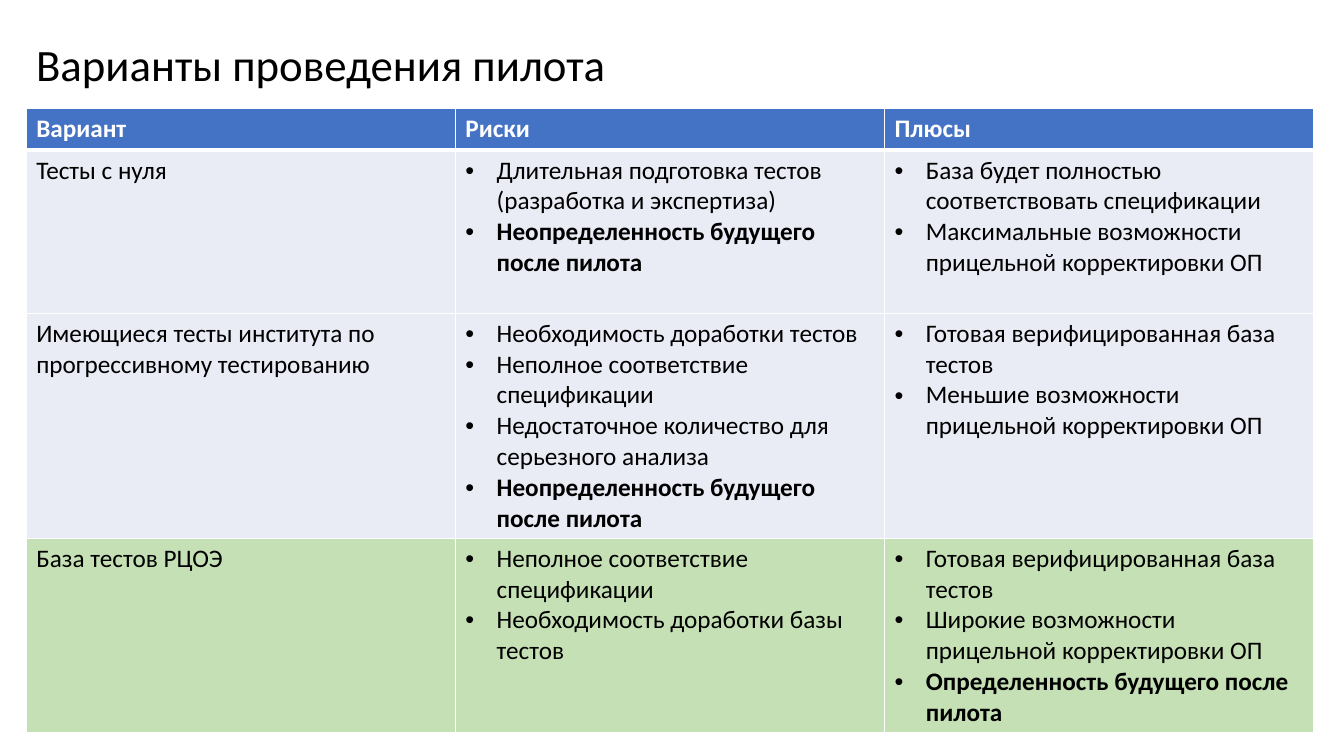
from pptx import Presentation
from pptx.dml.color import RGBColor
from pptx.enum.text import MSO_ANCHOR
from pptx.oxml import parse_xml
from pptx.oxml.ns import nsdecls
from pptx.util import Inches, Pt

# Content: a string is plain text, a list is bulleted, "*" marks a bold item
TITLE = "Варианты проведения пилота"
HEADER = ["Вариант", "Риски", "Плюсы"]
OPTIONS = [
    ("Тесты с нуля",
     ["Длительная подготовка тестов (разработка и экспертиза)",
      "*Неопределенность будущего после пилота"],
     ["База будет полностью соответствовать спецификации",
      "Максимальные возможности прицельной корректировки ОП"]),
    ("Имеющиеся тесты института по прогрессивному тестированию",
     ["Необходимость доработки тестов",
      "Неполное соответствие спецификации",
      "Недостаточное количество для серьезного анализа",
      "*Неопределенность будущего после пилота"],
     ["Готовая верифицированная база тестов",
      "Меньшие возможности прицельной корректировки ОП"]),
    ("База тестов РЦОЭ",
     ["Неполное соответствие спецификации",
      "Необходимость доработки базы тестов"],
     ["Готовая верифицированная база тестов",
      "Широкие возможности прицельной корректировки ОП",
      "*Определенность будущего после пилота"]),
]
ROW_HEIGHTS = [0.41, 1.62, 2.23, 1.93]
LEFT, TABLE_TOP, TABLE_WIDTH = 0.26, 1.08, 12.77
INDENT = Inches(0.31)

THEME = {
    "font": "Calibri", "title": 32, "body": 18,
    "text": "000000", "header_text": "FFFFFF", "border": "FFFFFF",
    "header": "4472C4", "row": "E9EBF5", "chosen": "C5E0B4",
}


def style(p, size, color, bold=False):
    for r in p.runs:
        r.font.name = THEME["font"]
        r.font.size = Pt(size)
        r.font.bold = bold
        r.font.color.rgb = RGBColor.from_string(color)


def add_bullet(p):
    pPr = p._p.get_or_add_pPr()
    pPr.set("marL", str(INDENT))
    pPr.set("indent", str(-INDENT))
    pPr.append(parse_xml(f'<a:buFont {nsdecls("a")} typeface="Arial"/>'))
    pPr.append(parse_xml(f'<a:buChar {nsdecls("a")} char="•"/>'))


def set_borders(cell, top, bottom):
    tcPr = cell._tc.get_or_add_tcPr()
    widths = {"lnL": 1, "lnR": 1, "lnT": top, "lnB": bottom}
    for i, (side, width) in enumerate(widths.items()):
        tcPr.insert(i, parse_xml(
            f'<a:{side} {nsdecls("a")} w="{Pt(width)}"><a:solidFill>'
            f'<a:srgbClr val="{THEME["border"]}"/></a:solidFill></a:{side}>'))


def fill_cell(cell, content, fill, color, bold):
    cell.fill.solid()
    cell.fill.fore_color.rgb = RGBColor.from_string(fill)
    bulleted = isinstance(content, list)
    items = content if bulleted else [content]
    tf = cell.text_frame
    for i, item in enumerate(items):
        p = tf.add_paragraph() if i else tf.paragraphs[0]
        p.text = item.removeprefix("*")
        style(p, THEME["body"], color, bold or item.startswith("*"))
        if bulleted:
            add_bullet(p)


prs = Presentation()
prs.slide_width, prs.slide_height = Inches(13.33), Inches(7.5)
s = prs.slides.add_slide(prs.slide_layouts[6])

# Title
sp = s.shapes.add_textbox(Inches(LEFT), Inches(0.32), Inches(11.5), Inches(0.68))
tf = sp.text_frame
tf.word_wrap = True
tf.vertical_anchor = MSO_ANCHOR.MIDDLE
tf.text = TITLE
tf.paragraphs[0].line_spacing = 0.9
style(tf.paragraphs[0], THEME["title"], THEME["text"])

# Table of options
rows = [HEADER] + OPTIONS
table = s.shapes.add_table(
    len(rows), len(HEADER), Inches(LEFT), Inches(TABLE_TOP),
    Inches(TABLE_WIDTH), Inches(sum(ROW_HEIGHTS))).table
for col in table.columns:
    col.width = Inches(TABLE_WIDTH / len(HEADER))
fills = [THEME["header"], THEME["row"], THEME["row"], THEME["chosen"]]
for i, (row, height, fill) in enumerate(zip(rows, ROW_HEIGHTS, fills)):
    table.rows[i].height = Inches(height)
    color = THEME["text"] if i else THEME["header_text"]
    for j, content in enumerate(row):
        cell = table.cell(i, j)
        fill_cell(cell, content, fill, color, bold=i == 0)
        set_borders(cell, top=3 if i == 1 else 1, bottom=3 if i == 0 else 1)

prs.save("out.pptx")
